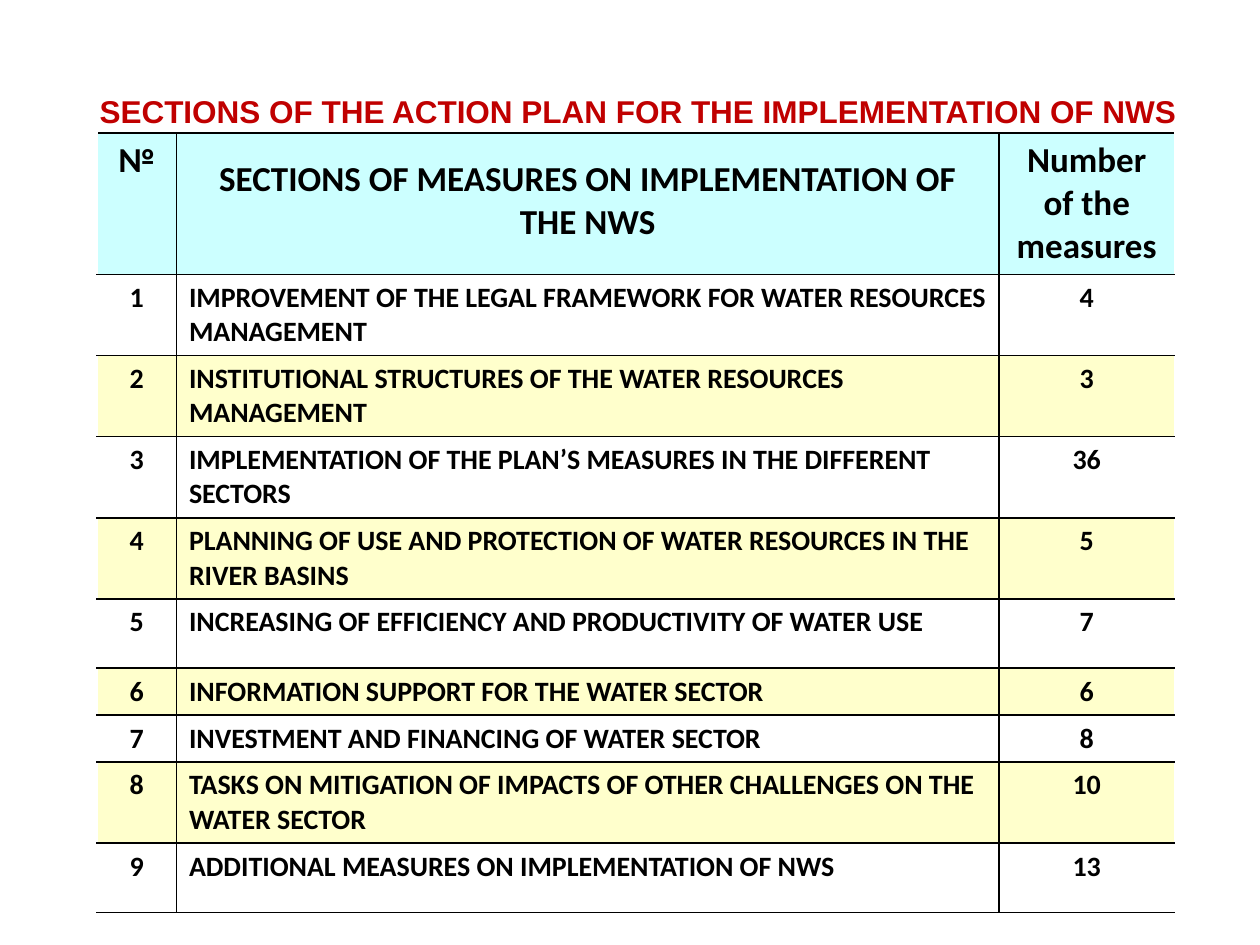
from lxml import etree
from pptx import Presentation
from pptx.dml.color import RGBColor
from pptx.enum.text import MSO_ANCHOR, MSO_AUTO_SIZE, PP_ALIGN
from pptx.oxml.ns import qn
from pptx.util import Inches, Pt

LEFT, CENTER, JUSTIFY = PP_ALIGN.LEFT, PP_ALIGN.CENTER, PP_ALIGN.JUSTIFY
MIDDLE, NO_FIT = MSO_ANCHOR.MIDDLE, MSO_AUTO_SIZE.NONE
TITLE_ONLY = 5

WIDTH, HEIGHT = 10, 7.5
COLUMNS = (0.63, 6.53, 1.39)
HEADER_HEIGHT, TWO_LINES, SPACED_LINE, ONE_LINE = 0.83, 0.6, 0.55, 0.35

HEADERS = ("№", "SECTIONS OF MEASURES ON IMPLEMENTATION OF THE NWS",
           "Number of the measures")
# Section name, number of measures, row height
SECTIONS = (
    ("IMPROVEMENT OF THE LEGAL FRAMEWORK FOR WATER RESOURCES MANAGEMENT", 4, TWO_LINES),
    ("INSTITUTIONAL STRUCTURES OF THE WATER RESOURCES MANAGEMENT", 3, TWO_LINES),
    ("IMPLEMENTATION OF THE PLAN’S MEASURES IN THE DIFFERENT SECTORS", 36, TWO_LINES),
    ("PLANNING OF USE AND PROTECTION OF WATER RESOURCES IN THE RIVER BASINS", 5, TWO_LINES),
    ("INCREASING OF EFFICIENCY AND PRODUCTIVITY OF WATER USE", 7, SPACED_LINE),
    ("INFORMATION SUPPORT FOR THE WATER SECTOR", 6, ONE_LINE),
    ("INVESTMENT AND FINANCING OF WATER SECTOR", 8, ONE_LINE),
    ("TASKS ON MITIGATION OF IMPACTS OF OTHER CHALLENGES ON THE WATER SECTOR", 10, TWO_LINES),
    ("ADDITIONAL MEASURES ON IMPLEMENTATION OF NWS", 13, SPACED_LINE),
)


def color(value):
    return RGBColor.from_string(value)


def write(text_frame, text, font="Calibri", size=16, fill="000000", align=LEFT):
    paragraph = text_frame.paragraphs[0]
    paragraph.alignment = align
    run = paragraph.add_run()
    run.text = text
    run.font.name = font
    run.font.size = Pt(size)
    run.font.bold = True
    run.font.color.rgb = color(fill)
    return paragraph


def set_borders(cell, **sides):
    properties = cell._tc.get_or_add_tcPr()
    # Border lines come before the fill, in the order left, right, top, bottom
    for index, side in enumerate(("left", "right", "top", "bottom")):
        line = etree.Element(qn(f"a:ln{side[0].upper()}"), w=str(Pt(1)))
        solid = etree.SubElement(line, qn("a:solidFill"))
        etree.SubElement(solid, qn("a:srgbClr"), val=sides.get(side, "000000"))
        properties.insert(index, line)


class SlideBuilder:
    title_color, header_fill = "C00000", "CCFFFF"
    row_fills = ("FFFFFF", "FFFFCC")

    def __init__(self, presentation):
        self.slide = presentation.slides.add_slide(presentation.slide_layouts[TITLE_ONLY])

    def title(self, text, left, top, width, height):
        shape = self.slide.shapes.title
        shape.left, shape.top = Inches(left * WIDTH), Inches(top * HEIGHT)
        shape.width, shape.height = Inches(width * WIDTH), Inches(height * HEIGHT)
        frame = shape.text_frame
        frame.word_wrap, frame.auto_size = True, NO_FIT
        frame.vertical_anchor = MIDDLE
        paragraph = write(frame, text, font="Arial", size=18,
                          fill=self.title_color, align=JUSTIFY)
        paragraph.line_spacing = 0.9
        paragraph.space_before, paragraph.space_after = Pt(20), Pt(2)

    def cell(self, cell, text, fill, column, **text_format):
        cell.fill.solid()
        cell.fill.fore_color.rgb = color(fill)
        write(cell.text_frame, text, **text_format)
        outer_sides = {0: {"left": "FFFFFF"}, len(COLUMNS) - 1: {"right": "FFFFFF"}}
        set_borders(cell, **outer_sides.get(column, {}))

    def table(self, left, top):
        heights = [HEADER_HEIGHT] + [height for _, _, height in SECTIONS]
        frame = self.slide.shapes.add_table(
            len(heights), len(COLUMNS), Inches(left * WIDTH), Inches(top * HEIGHT),
            Inches(sum(COLUMNS)), Inches(sum(heights)))
        table = frame.table
        for column, width in zip(table.columns, COLUMNS):
            column.width = Inches(width)
        for row, height in zip(table.rows, heights):
            row.height = Inches(height)

        # Header row
        for column, text in enumerate(HEADERS):
            self.cell(table.cell(0, column), text, self.header_fill, column,
                      size=20, align=CENTER)
        table.cell(0, 1).margin_top = Inches(0.2)

        # Numbered sections in alternating colours
        for number, (name, measures, _) in enumerate(SECTIONS, 1):
            fill = self.row_fills[(number - 1) % 2]
            for column, text in enumerate((str(number), name, str(measures))):
                self.cell(table.cell(number, column), text, fill, column,
                          align=LEFT if column == 1 else CENTER)


def main():
    presentation = Presentation()
    presentation.slide_width, presentation.slide_height = Inches(WIDTH), Inches(HEIGHT)
    builder = SlideBuilder(presentation)
    builder.title("SECTIONS OF THE ACTION PLAN FOR THE IMPLEMENTATION OF NWS",
                  left=0.069, top=0.083, width=0.92, height=0.073)
    builder.table(left=0.077, top=0.141)
    presentation.save("out.pptx")


if __name__ == "__main__":
    main()
